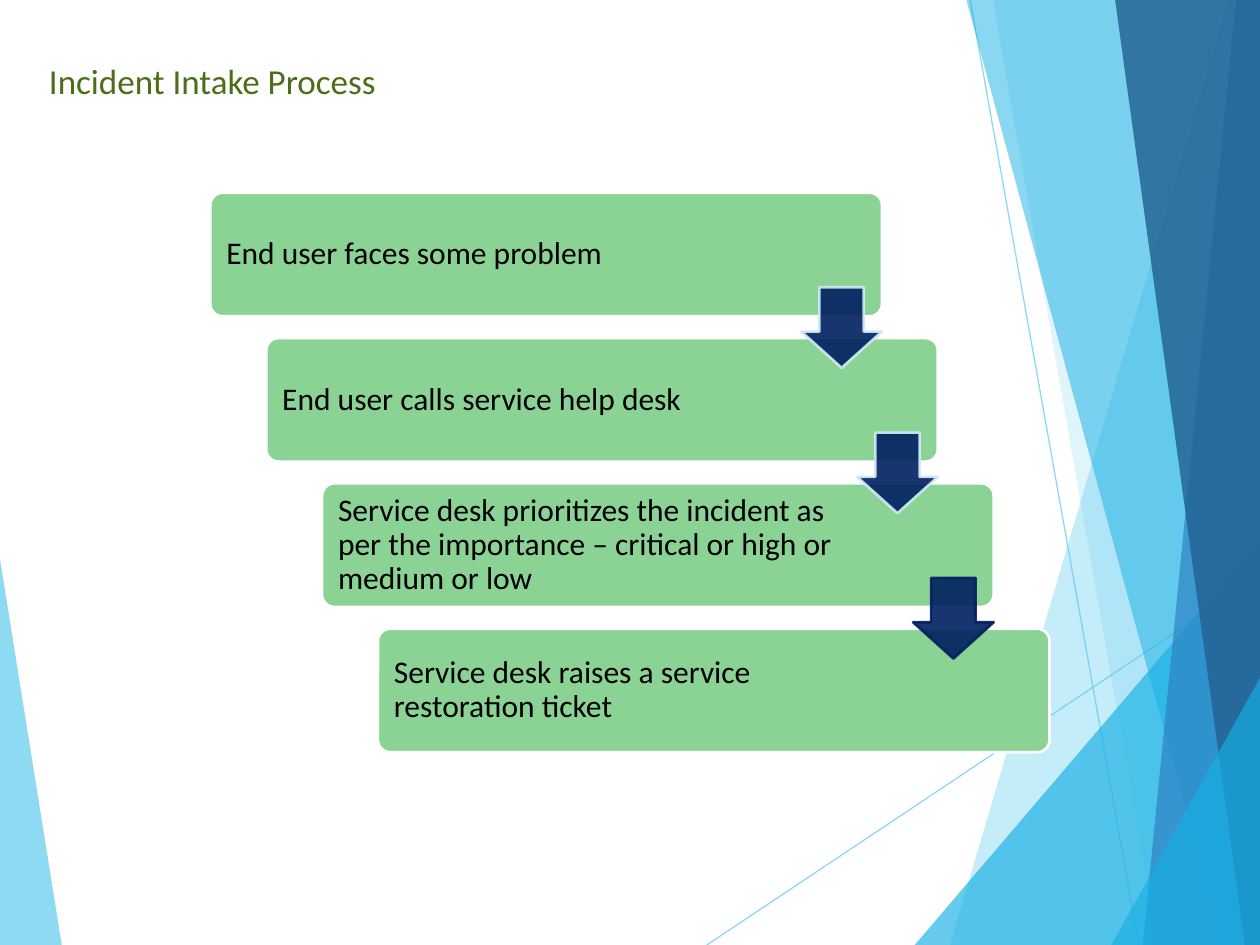
from pptx import Presentation
from pptx.dml.color import RGBColor
from pptx.enum.shapes import MSO_CONNECTOR, MSO_SHAPE
from pptx.enum.text import MSO_ANCHOR, PP_ALIGN
from pptx.oxml.ns import qn
from pptx.util import Inches, Pt
from lxml import etree

ROUNDED = MSO_SHAPE.ROUNDED_RECTANGLE
DOWN_ARROW = MSO_SHAPE.DOWN_ARROW
STRAIGHT = MSO_CONNECTOR.STRAIGHT
MIDDLE = MSO_ANCHOR.MIDDLE
LEFT = PP_ALIGN.LEFT

SKY = RGBColor(0x5F, 0xCB, 0xEF)
CYAN = RGBColor(0x17, 0xB0, 0xE4)
BLUE = RGBColor(0x2E, 0x83, 0xC3)
STEEL = RGBColor(0x22, 0x62, 0x92)
OLIVE = RGBColor(0x4C, 0x6E, 0x1B)
GREEN = RGBColor(0x8A, 0xD3, 0x94)
NAVY = RGBColor(0x00, 0x20, 0x60)
PALE = RGBColor(0xD2, 0xEC, 0xF9)
WHITE = RGBColor(0xFF, 0xFF, 0xFF)
BLACK = RGBColor(0x00, 0x00, 0x00)

FONT = "Calibri"
RAYS = [((5.61, 7.5), (10, 4.57)), ((7.7, 0), (9.04, 7.5))]
FACETS = [
    ([(0, 4.44), (0.49, 7.5), (0, 7.5)], SKY, 70),
    ([(9.75, 0), (7.54, 7.5), (10, 7.5), (10, 0)], SKY, 36),
    ([(7.88, 0), (9.19, 7.5), (10, 7.5), (10, 0)], SKY, 20),
    ([(7.26, 7.5), (10, 4.29), (10, 7.5)], CYAN, 66),
    ([(7.67, 0), (9.7, 7.5), (10, 7.5), (10, 0)], CYAN, 50),
    ([(9.81, 0), (9.07, 7.5), (10, 7.5), (10, 0)], BLUE, 70),
    ([(8.85, 0), (9.88, 7.5), (10, 7.5), (10, 0)], STEEL, 82),
    ([(8.82, 7.5), (10, 5.38), (10, 7.5)], CYAN, 66),
]
STEPS = [
    "End user faces some problem",
    "End user calls service help desk",
    "Service desk prioritizes the incident as per the importance – critical or high or medium or low",
    "Service desk raises a service restoration ticket",
]
ARROW_OUTLINES = [PALE, PALE, NAVY]


def set_opacity(shape, percent):
    """Make every colour of the shape's fill and line partly transparent."""
    for colour in shape.element.spPr.iter(qn("a:srgbClr")):
        etree.SubElement(colour, qn("a:alpha"), val=str(percent * 1000))


def paint(shape, fill, outline=None):
    """Give the shape a flat fill and an optional outline."""
    shape.shadow.inherit = False
    shape.fill.solid()
    shape.fill.fore_color.rgb = fill
    if outline is None:
        shape.line.fill.background()
    else:
        shape.line.color.rgb = outline
        shape.line.width = Pt(1.5)


def write(frame, text, size, colour):
    """Put one left-aligned line of styled text in the frame."""
    frame.text = text
    paragraph = frame.paragraphs[0]
    paragraph.alignment = LEFT
    font = paragraph.runs[0].font
    font.name = FONT
    font.size = Pt(size)
    font.color.rgb = colour
    return paragraph


def add_facet(slide, left, top, points, colour, opacity):
    """Draw one translucent polygon of the backdrop."""
    corners = [(left + Inches(x), top + Inches(y)) for x, y in points]
    builder = slide.shapes.build_freeform(*corners[0])
    builder.add_line_segments(corners[1:], close=True)
    facet = builder.convert_to_shape()
    paint(facet, colour)
    set_opacity(facet, opacity)


def add_ray(slide, left, top, start, end):
    """Draw one thin translucent line of the backdrop."""
    ray = slide.shapes.add_connector(
        STRAIGHT,
        left + Inches(start[0]), top + Inches(start[1]),
        left + Inches(end[0]), top + Inches(end[1]),
    )
    ray.line.color.rgb = SKY
    ray.line.width = Pt(0.75)
    set_opacity(ray, 70)
    etree.SubElement(ray.element.spPr, qn("a:effectLst"))


def add_backdrop(slide, left, top):
    """Draw the facets and rays, the rays above the first facet only."""
    add_facet(slide, left, top, *FACETS[0])
    for start, end in RAYS:
        add_ray(slide, left, top, start, end)
    for facet in FACETS[1:]:
        add_facet(slide, left, top, *facet)


def add_title(slide, left, top, width, height):
    """Write the slide title."""
    title = slide.shapes.add_textbox(left, top, width, height)
    title.text_frame.word_wrap = True
    write(title.text_frame, "Incident Intake Process", 20, OLIVE)


def add_step(slide, left, top, width, height, text):
    """Draw one step card, leaving room for the arrow at its right."""
    card = slide.shapes.add_shape(ROUNDED, left, top, width, height)
    card.adjustments[0] = 0.1
    paint(card, GREEN, WHITE)
    frame = card.text_frame
    frame.word_wrap = True
    frame.vertical_anchor = MIDDLE
    frame.margin_left = frame.margin_top = frame.margin_bottom = Inches(0.1)
    frame.margin_right = Inches(1.17)
    write(frame, text, 18, BLACK).line_spacing = 0.9


def add_arrow(slide, left, top, side, outline):
    """Draw one down arrow between two steps."""
    arrow = slide.shapes.add_shape(DOWN_ARROW, left, top, side, side)
    arrow.adjustments[0] = 0.55
    arrow.adjustments[1] = 0.45
    paint(arrow, NAVY, outline)
    set_opacity(arrow, 90)


def add_staircase(slide, left, top, width, height):
    """Lay the steps out as a descending staircase joined by arrows."""
    card_width, card_height, side = Inches(5.33), Inches(0.98), Inches(0.64)
    gaps = len(STEPS) - 1
    shift = (width - card_width) // gaps
    drop = (height - card_height) // gaps
    for index, text in enumerate(STEPS):
        add_step(slide, left + index * shift, top + index * drop,
                 card_width, card_height, text)
    for index, outline in enumerate(ARROW_OUTLINES):
        add_arrow(slide, left + index * shift + card_width - side,
                  top + index * drop + Inches(0.75), side, outline)


def main():
    """Build and save the incident intake slide."""
    deck = Presentation()
    deck.slide_width, deck.slide_height = Inches(10), Inches(7.5)
    slide = deck.slides.add_slide(deck.slide_layouts[6])
    add_backdrop(slide, Inches(0), Inches(0))
    add_title(slide, Inches(0.29), Inches(0.42), Inches(2.95), Inches(0.44))
    add_staircase(slide, Inches(1.67), Inches(1.53), Inches(6.66), Inches(4.44))
    deck.save("out.pptx")


if __name__ == "__main__":
    main()
